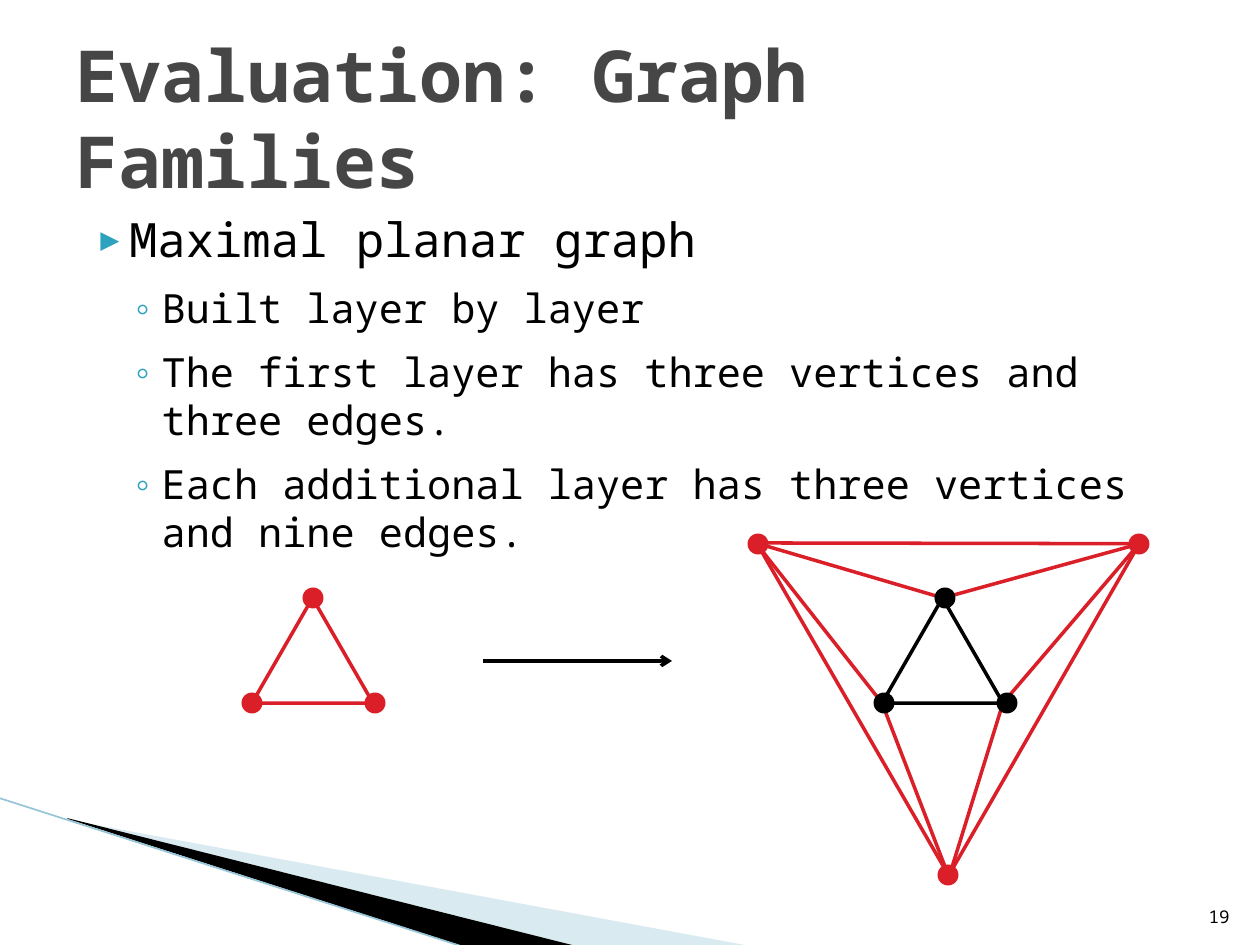
"""Build the slide on maximal planar graphs as a graph family."""
from lxml import etree
from pptx import Presentation
from pptx.dml.color import RGBColor
from pptx.enum.shapes import MSO_CONNECTOR, MSO_SHAPE
from pptx.enum.text import MSO_ANCHOR, MSO_AUTO_SIZE, PP_ALIGN
from pptx.oxml.ns import qn
from pptx.util import Pt

STRAIGHT = MSO_CONNECTOR.STRAIGHT
TRIANGLE, OVAL = MSO_SHAPE.ISOSCELES_TRIANGLE, MSO_SHAPE.OVAL
TOP, MIDDLE, BOTTOM = MSO_ANCHOR.TOP, MSO_ANCHOR.MIDDLE, MSO_ANCHOR.BOTTOM
LEFT, RIGHT = PP_ALIGN.LEFT, PP_ALIGN.RIGHT
NO_FIT = MSO_AUTO_SIZE.NONE

SCALE = 914400 / 126
FONT = "Noto Sans Mono"
BLACK, RED, GREY, TEAL = "000000", "DA1F28", "464646", "2DA2BF"

TITLE = "Evaluation: Graph Families"
BODY = [
    (0, "Maximal planar graph"),
    (1, "Built layer by layer"),
    (1, "The first layer has three vertices and three edges."),
    (1, "Each additional layer has three vertices and nine edges."),
]
LEVELS = [
    dict(size=27, before=0, margin=50, hang=35, bullet="▶", bullet_size=68),
    dict(size=23, before=9, margin=86, hang=31, bullet="◦", bullet_size=100),
]
PAGE = "19"

SWOOSHES = [
    ([(69, 820), (750, 946), (575, 946), (69, 819)], "A0CBDC", 40),
    ([(67, 818), (576, 946), (469, 948), (68, 819)], BLACK, 100),
]
SWOOSH_EDGE = ((-1, 798), (467, 948))

INNER_SIZE, OUTER_SIZE = (121, 105), (384, 331)
FIRST_INNER, SECOND_INNER, OUTER = (252, 598), (882, 598), (804, 461)
OUTER_TURN = 60
DOT = 21
FIRST_LAYER = [(313, 598), (252, 703), (375, 703)]
INNER_LAYER = [(945, 598), (884, 703), (1007, 703)]
OUTER_LAYER = [(758, 544), (1139, 544), (948, 875)]
LAYER_LINKS = [
    ((1139, 544), (943, 598)),
    ((1003, 703), (1139, 544)),
    ((943, 598), (756, 543)),
    ((756, 543), (882, 703)),
    ((1003, 703), (949, 877)),
    ((949, 877), (882, 703)),
]
STEP_ARROW = ((483, 661), (672, 661))


def px(*lengths):
    return [round(length * SCALE) for length in lengths]


def rgb(color):
    return RGBColor.from_string(color)


def write(paragraph, text, size=10, color=BLACK, bold=False, align=LEFT, before=0,
          margin=0, hang=0, bullet=None, bullet_size=100):
    props = paragraph._p.get_or_add_pPr()
    left, indent = px(margin, -hang)
    props.set("marL", str(left))
    props.set("indent", str(indent))
    if bullet:
        bullet_color = etree.SubElement(props, qn("a:buClr"))
        etree.SubElement(bullet_color, qn("a:srgbClr"), val=TEAL)
        etree.SubElement(props, qn("a:buSzPct"), val=str(bullet_size * 1000))
        etree.SubElement(props, qn("a:buFont"), typeface=FONT)
        etree.SubElement(props, qn("a:buChar"), char=bullet)
    paragraph.alignment = align
    paragraph.space_before = Pt(before)
    run = paragraph.add_run()
    run.text = text
    run.font.name, run.font.size, run.font.bold = FONT, Pt(size), bold
    run.font.color.rgb = rgb(color)


def frame(holder, box, anchor):
    holder.left, holder.top, holder.width, holder.height = px(*box)
    text_frame = holder.text_frame
    text_frame.word_wrap = True
    text_frame.auto_size = NO_FIT
    text_frame.vertical_anchor = anchor
    return text_frame


def add_swoosh(slide, points, color, opacity):
    builder = slide.shapes.build_freeform(*points[0], scale=SCALE)
    builder.add_line_segments(points[1:], close=True)
    swoosh = builder.convert_to_shape()
    swoosh.shadow.inherit = False
    swoosh.fill.solid()
    swoosh.fill.fore_color.rgb = rgb(color)
    swoosh.line.fill.background()
    if opacity < 100:
        fill_color = swoosh._element.spPr.find(".//" + qn("a:srgbClr"))
        etree.SubElement(fill_color, qn("a:alpha"), val=str(opacity * 1000))


def add_edge(slide, start, end, color, width=2, arrow=False):
    edge = slide.shapes.add_connector(STRAIGHT, *px(*start, *end))
    edge.line.color.rgb = rgb(color)
    edge.line.width = Pt(width)
    if arrow:
        etree.SubElement(edge.line._get_or_add_ln(), qn("a:tailEnd"), type="arrow")
    etree.SubElement(edge._element.spPr, qn("a:effectLst"))


def add_triangle(slide, corner, size, color, turn=0):
    triangle = slide.shapes.add_shape(TRIANGLE, *px(*corner, *size))
    triangle.shadow.inherit = False
    triangle.fill.background()
    triangle.line.color.rgb = rgb(color)
    triangle.line.width = Pt(2)
    triangle.rotation = turn


def add_vertices(slide, centers, color):
    for x, y in centers:
        vertex = slide.shapes.add_shape(OVAL, *px(x - DOT / 2, y - DOT / 2, DOT, DOT))
        vertex.shadow.inherit = False
        vertex.fill.solid()
        vertex.fill.fore_color.rgb = rgb(color)
        vertex.line.fill.background()


def main():
    deck = Presentation()
    deck.slide_width, deck.slide_height = px(1260, 945)
    slide = deck.slides.add_slide(deck.slide_layouts[1])

    for points, color, opacity in SWOOSHES:
        add_swoosh(slide, points, color, opacity)
    add_edge(slide, *SWOOSH_EDGE, "97C5D8", width=0.95)

    title = frame(slide.shapes.title, (63, 38, 1134, 157), MIDDLE)
    write(title.paragraphs[0], TITLE, size=41, color=GREY, bold=True)

    body = frame(slide.placeholders[1], (63, 204, 1134, 310), TOP)
    for index, (level, text) in enumerate(BODY):
        paragraph = body.add_paragraph() if index else body.paragraphs[0]
        paragraph.level = level
        write(paragraph, text, **LEVELS[level])

    page = frame(slide.shapes.add_textbox(0, 0, 0, 0), (1192, 883, 50, 50), BOTTOM)
    write(page.paragraphs[0], PAGE, align=RIGHT)

    add_triangle(slide, SECOND_INNER, INNER_SIZE, BLACK)
    add_triangle(slide, OUTER, OUTER_SIZE, RED, OUTER_TURN)
    for start, end in LAYER_LINKS:
        add_edge(slide, start, end, RED)
    add_triangle(slide, FIRST_INNER, INNER_SIZE, RED)
    add_edge(slide, *STEP_ARROW, BLACK, arrow=True)
    add_vertices(slide, FIRST_LAYER + OUTER_LAYER, RED)
    add_vertices(slide, INNER_LAYER, BLACK)

    deck.save("out.pptx")


if __name__ == "__main__":
    main()
